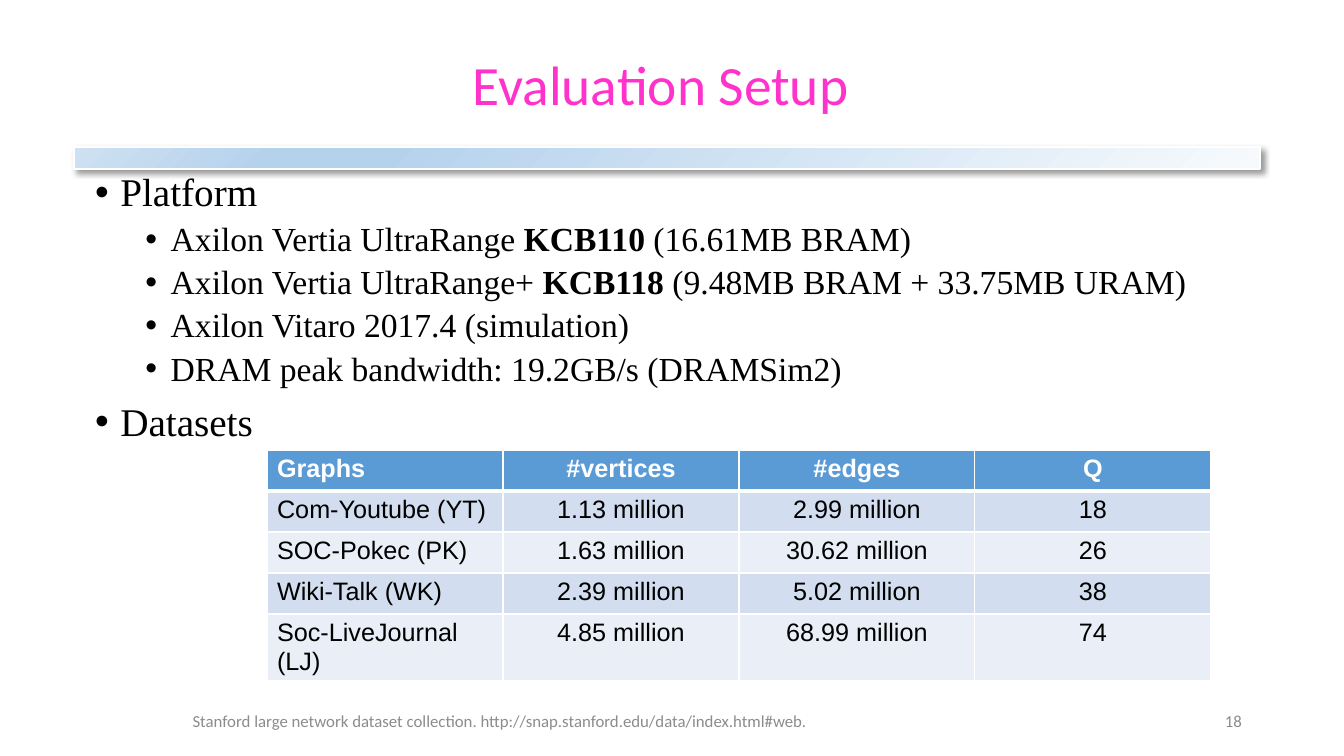
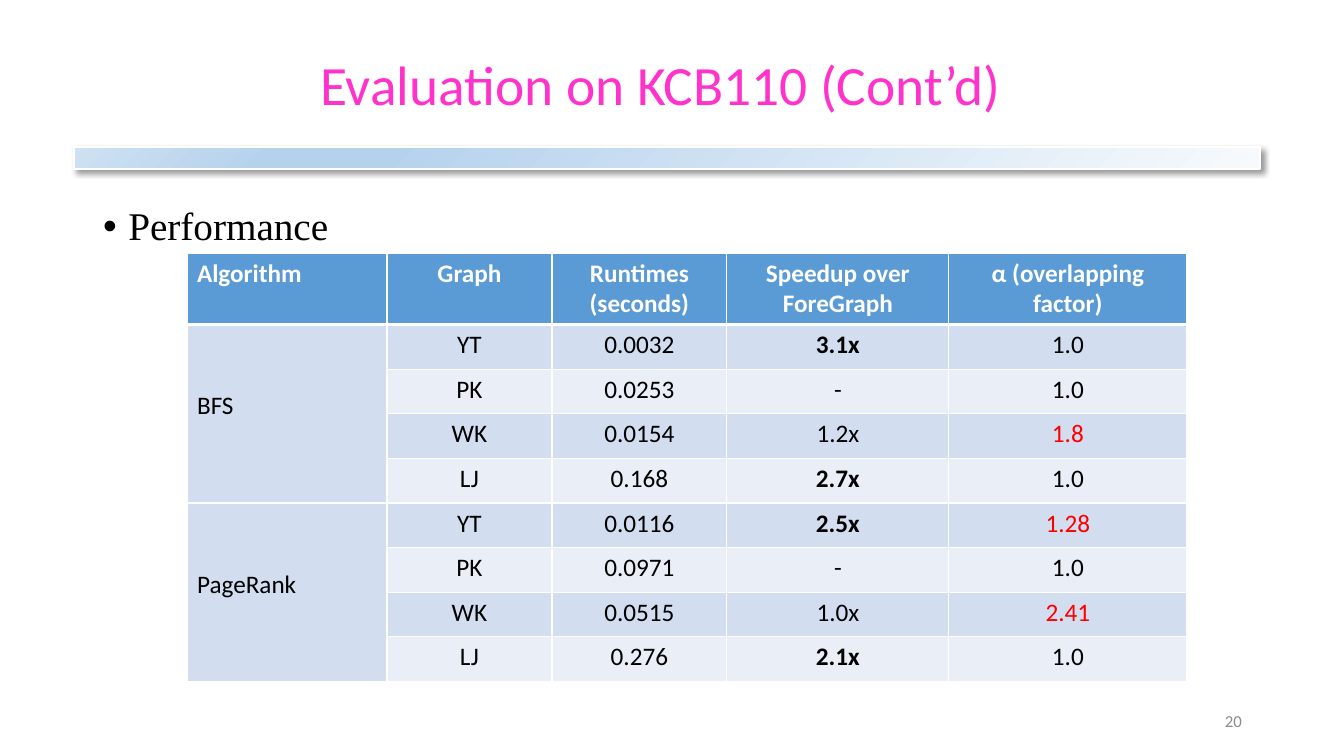
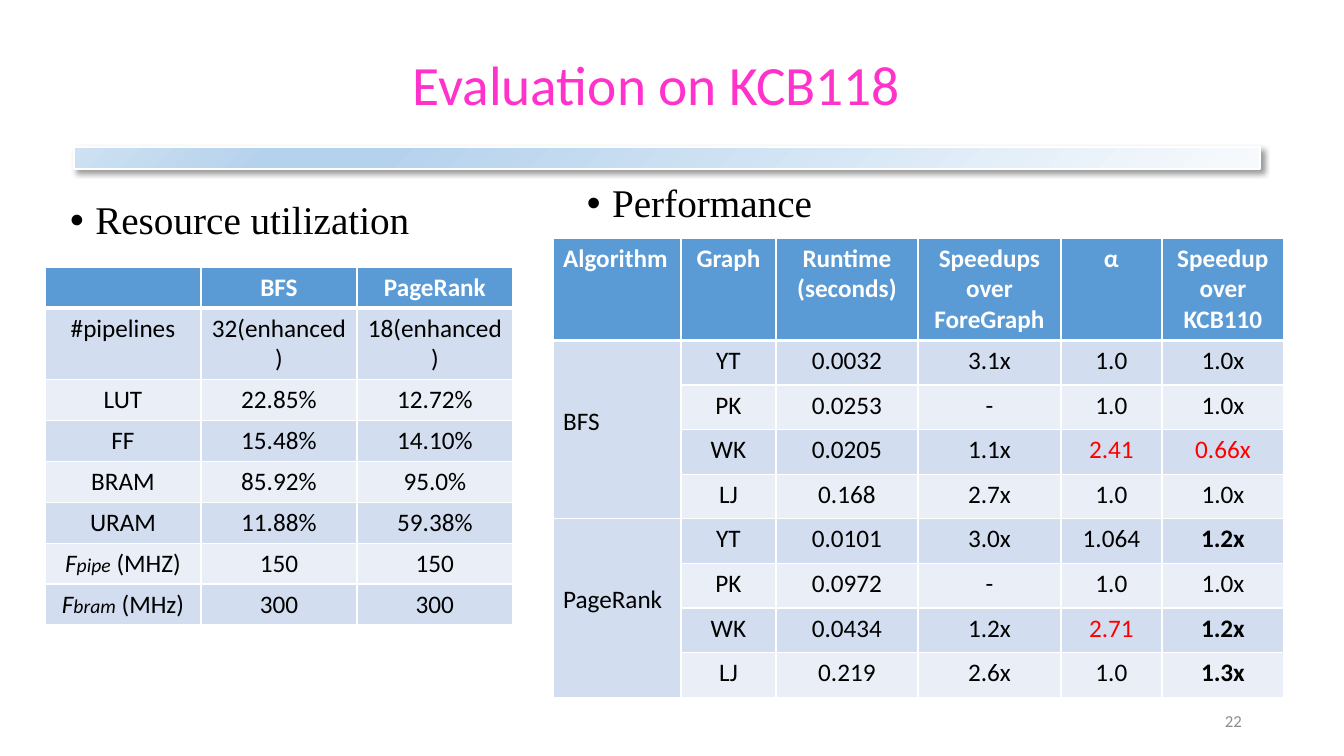
from dataclasses import dataclass
from typing import Optional, Union

from lxml.etree import SubElement
from pptx import Presentation
from pptx.dml.color import RGBColor
from pptx.enum.shapes import MSO_SHAPE as Shape
from pptx.enum.text import MSO_ANCHOR as Anchor, MSO_AUTO_SIZE as AutoSize, PP_ALIGN as Align
from pptx.oxml import parse_xml
from pptx.oxml.ns import nsdecls, qn
from pptx.util import Emu, Pt

PX = 914400 / 100.8
COLORS = {
    "title": "FF33CC", "text": "000000", "muted": "8C8C8C", "white": "FFFFFF",
    "alert": "FF0000", "header": "5B9BD5", "odd": "D2DEEF", "even": "EAEFF7",
}
SANS, SERIF, TABLE_SANS = "Calibri", "Times New Roman", "Arial"
RULE_STOPS = ((0, "F7FAFD"), (74, "B5D2EC"), (83, "B5D2EC"), (100, "CEE1F2"))
GROUP_ROWS = 4
GROUP_TOP = 66


@dataclass(frozen=True)
class Box:
    left: int
    top: int
    width: int
    height: int

    def emu(self) -> tuple:
        return tuple(px(v) for v in (self.left, self.top, self.width, self.height))


@dataclass(frozen=True)
class Span:
    text: str
    bold: bool = False
    italic: bool = False
    size: Optional[float] = None
    color: Optional[str] = None


Content = Union[str, Span, tuple]


@dataclass(frozen=True)
class Bullet:
    content: Content
    level: int = 0


@dataclass(frozen=True)
class Grid:
    left: int
    top: int
    columns: tuple
    header_height: int
    body_height: int
    rows: tuple
    font: str = SANS
    left_columns: int = 1
    grouped: bool = False


TITLE_BOX = Box(165, 55, 991, 66)
RULE_BOX = Box(74, 147, 1186, 22)
FOOTER_BOX = Box(102, 701, 796, 40)
NUMBER_BOX = Box(950, 701, 302, 40)


def px(length: float) -> Emu:
    return Emu(round(length * PX))


def bold(text: str) -> Span:
    return Span(text, bold=True)


def red(text: str) -> Span:
    return Span(text, color="alert")


def write(para, content: Content, *, size: float, font: str, color: str = "text",
          is_bold: bool = False, align=Align.LEFT, line_spacing=None, before=0) -> None:
    """Write one string, span or tuple of spans into a paragraph."""
    para.alignment = align
    para.space_before = Pt(before)
    if line_spacing:
        para.line_spacing = line_spacing
    for part in content if isinstance(content, tuple) else (content,):
        span = part if isinstance(part, Span) else Span(part)
        run = para.add_run()
        run.text = span.text
        run.font.name = font
        run.font.size = Pt(span.size or size)
        run.font.bold = is_bold or span.bold
        run.font.italic = span.italic
        run.font.color.rgb = RGBColor.from_string(COLORS[span.color or color])


def prepare(shape, box: Box, anchor=Anchor.TOP):
    shape.left, shape.top, shape.width, shape.height = box.emu()
    frame = shape.text_frame
    frame.word_wrap = True
    frame.auto_size = AutoSize.NONE
    frame.vertical_anchor = anchor
    return frame


def add_label(page, box: Box, text: str, align) -> None:
    frame = prepare(page.shapes.add_textbox(*box.emu()), box, Anchor.MIDDLE)
    write(frame.paragraphs[0], text, size=12, font=SANS, color="muted", align=align)


def fill_bullets(shape, box: Box, bullets: tuple) -> None:
    frame = prepare(shape, box)
    for index, bullet in enumerate(bullets):
        para = frame.add_paragraph() if index else frame.paragraphs[0]
        para.level = bullet.level
        properties = para._p.get_or_add_pPr()
        properties.set("marL", str(228600 + 457200 * bullet.level))
        properties.set("indent", "-228600")
        SubElement(properties, qn("a:buFont")).set("typeface", "Arial")
        SubElement(properties, qn("a:buChar")).set("char", "•")
        spacing = 5 if bullet.level else 10
        write(para, bullet.content, size=24 if bullet.level else 28, font=SERIF,
              line_spacing=0.9, before=spacing if index else 0)


# Shared parts
def add_rule(page) -> None:
    """Draw the gradient rule and move it into the layout of the page."""
    rule = page.shapes.add_shape(Shape.RECTANGLE, *RULE_BOX.emu())
    rule.line.color.rgb = RGBColor.from_string(COLORS["white"])
    rule.line.width = Pt(1)
    stops = "".join(f'<a:gs pos="{at * 1000}"><a:srgbClr val="{color}"/></a:gs>'
                    for at, color in RULE_STOPS)
    gradient = parse_xml(
        f'<a:gradFill {nsdecls("a")} rotWithShape="1"><a:gsLst>{stops}</a:gsLst>'
        '<a:path path="circle"><a:fillToRect l="100000" t="100000"/></a:path></a:gradFill>')
    shadow = parse_xml(
        f'<a:effectLst {nsdecls("a")}><a:outerShdw blurRad="50800" dist="38100" '
        'dir="2700000" algn="tl" rotWithShape="0"><a:srgbClr val="000000">'
        '<a:alpha val="40000"/></a:srgbClr></a:outerShdw></a:effectLst>')
    properties = rule._element.spPr
    properties.find(qn("a:prstGeom")).addnext(gradient)
    properties.find(qn("a:ln")).addnext(shadow)
    page.slide_layout.shapes._spTree.insert(2, rule._element)


def add_page(deck, title: str, number: str, title_box: Box = TITLE_BOX):
    page = deck.slides.add_slide(deck.slide_layouts[1])
    frame = prepare(page.shapes.title, title_box, Anchor.MIDDLE)
    write(frame.paragraphs[0], title, size=39.6, font=SANS, color="title",
          align=Align.CENTER, line_spacing=0.9)
    add_label(page, NUMBER_BOX, number, Align.RIGHT)
    return page


# Tables
def set_borders(cell, top: int, bottom: int) -> None:
    properties = cell._tc.get_or_add_tcPr()
    widths = (("lnL", 1), ("lnR", 1), ("lnT", top), ("lnB", bottom))
    for index, (side, width) in enumerate(widths):
        properties.insert(index, parse_xml(
            f'<a:{side} {nsdecls("a")} w="{width * 12700}"><a:solidFill>'
            f'<a:srgbClr val="{COLORS["white"]}"/></a:solidFill></a:{side}>'))


def add_grid(page, grid: Grid) -> None:
    box = Box(grid.left, grid.top, sum(grid.columns), grid.header_height + grid.body_height)
    body_rows = len(grid.rows) - 1
    table = page.shapes.add_table(len(grid.rows), len(grid.columns), *box.emu()).table
    for column, width in zip(table.columns, grid.columns):
        column.width = px(width)
    for index, row in enumerate(table.rows):
        row.height = px(grid.body_height / body_rows if index else grid.header_height)

    for r, values in enumerate(grid.rows):
        fill = ("odd" if r % 2 else "even") if r else "header"
        for c, content in enumerate(values):
            cell = table.cell(r, c)
            cell.fill.solid()
            cell.fill.fore_color.rgb = RGBColor.from_string(COLORS[fill])
            set_borders(cell, top=3 if r == 1 else 1, bottom=1 if r else 3)
            if content:
                write(cell.text_frame.paragraphs[0], content, size=18, font=grid.font,
                      color="text" if r else "white", is_bold=r == 0,
                      align=Align.LEFT if c < grid.left_columns else Align.CENTER)

    if grid.grouped:
        for first in range(1, len(grid.rows), GROUP_ROWS):
            cell = table.cell(first, 0)
            cell.merge(table.cell(first + GROUP_ROWS - 1, 0))
            cell.margin_top = px(GROUP_TOP)


# Slide content
PLATFORM = (
    Bullet("Platform"),
    Bullet(("Axilon Vertia UltraRange ", bold("KCB110 "), "(16.61MB BRAM)"), 1),
    Bullet(("Axilon Vertia UltraRange+ ", bold("KCB118"),
            " (9.48MB BRAM + 33.75MB URAM)"), 1),
    Bullet("Axilon Vitaro 2017.4 (simulation)", 1),
    Bullet("DRAM peak bandwidth: 19.2GB/s (DRAMSim2)", 1),
    Bullet("Datasets"),
)
DATASETS = Grid(267, 450, (236,) * 4, 41, 164, (
    ("Graphs", "#vertices", "#edges", "Q"),
    ("Com-Youtube (YT)", "1.13 million", "2.99 million", "18"),
    ("SOC-Pokec (PK)", "1.63 million", "30.62 million", "26"),
    ("Wiki-Talk (WK)", "2.39 million", "5.02 million", "38"),
    ("Soc-LiveJournal (LJ)", "4.85 million", "68.99 million", "74"),
), font=TABLE_SANS)
FIRST_BOARD = Grid(187, 253, (200, 165, 175, 222, 238), 71, 357, (
    ("Algorithm", "Graph", "Runtimes (seconds)", "Speedup over ForeGraph",
     "α (overlapping factor)"),
    ("BFS", "YT", "0.0032", bold("3.1x"), "1.0"),
    ("", "PK", "0.0253", "-", "1.0"),
    ("", "WK", "0.0154", "1.2x", red("1.8")),
    ("", "LJ", "0.168", bold("2.7x"), "1.0"),
    ("PageRank", "YT", "0.0116", bold("2.5x"), red("1.28")),
    ("", "PK", "0.0971", "-", "1.0"),
    ("", "WK", "0.0515", "1.0x", red("2.41")),
    ("", "LJ", "0.276", bold("2.1x"), "1.0"),
), grouped=True)
RESOURCES = Grid(45, 267, (156,) * 3, 41, 286, (
    ("", "BFS", "PageRank"),
    ("#pipelines", "32(enhanced)", "18(enhanced)"),
    ("LUT", "22.85%", "12.72%"),
    ("FF", "15.48%", "14.10%"),
    ("BRAM", "85.92%", "95.0%"),
    ("URAM", "11.88%", "59.38%"),
    ((Span("F", italic=True), Span("pipe", italic=True, size=14), " (MHZ)"), "150", "150"),
    ((Span("F", italic=True), Span("bram", italic=True, size=14), " (MHz)"), "300", "300"),
), left_columns=0)
SECOND_BOARD = Grid(553, 238, (128, 95, 142, 143, 101, 122), 101, 357, (
    ("Algorithm", "Graph", "Runtime (seconds)", "Speedups over ForeGraph", "α",
     "Speedup over KCB110"),
    ("BFS", "YT", "0.0032", "3.1x", "1.0", "1.0x"),
    ("", "PK", "0.0253", "-", "1.0", "1.0x"),
    ("", "WK", "0.0205", "1.1x", red("2.41"), red("0.66x")),
    ("", "LJ", "0.168", "2.7x", "1.0", "1.0x"),
    ("PageRank", "YT", "0.0101", "3.0x", "1.064", bold("1.2x")),
    ("", "PK", "0.0972", "-", "1.0", "1.0x"),
    ("", "WK", "0.0434", "1.2x", red("2.71"), bold("1.2x")),
    ("", "LJ", "0.219", "2.6x", "1.0", bold("1.3x")),
), grouped=True)


def main() -> None:
    deck = Presentation()
    deck.slide_width, deck.slide_height = px(1344), px(756)
    performance = (Bullet("Performance"),)

    # Setup
    page = add_page(deck, "Evaluation Setup", "18")
    add_rule(page)
    fill_bullets(page.placeholders[1], Box(85, 168, 1159, 480), PLATFORM)
    add_label(page, FOOTER_BOX, "Stanford large network dataset collection. "
              "http://snap.stanford.edu/data/index.html#web.", Align.CENTER)
    add_grid(page, DATASETS)

    # First board
    page = add_page(deck, "Evaluation on KCB110 (Cont’d)", "20")
    fill_bullets(page.placeholders[1], Box(93, 202, 1159, 480), performance)
    add_grid(page, FIRST_BOARD)

    # Second board
    page = add_page(deck, "Evaluation on KCB118", "22", Box(165, 55, 983, 66))
    fill_bullets(page.placeholders[1], Box(60, 196, 508, 480),
                 (Bullet("Resource utilization"),))
    add_grid(page, RESOURCES)
    box = Box(577, 179, 508, 480)
    fill_bullets(page.shapes.add_textbox(*box.emu()), box, performance)
    add_grid(page, SECOND_BOARD)

    deck.save("out.pptx")


if __name__ == "__main__":
    main()
